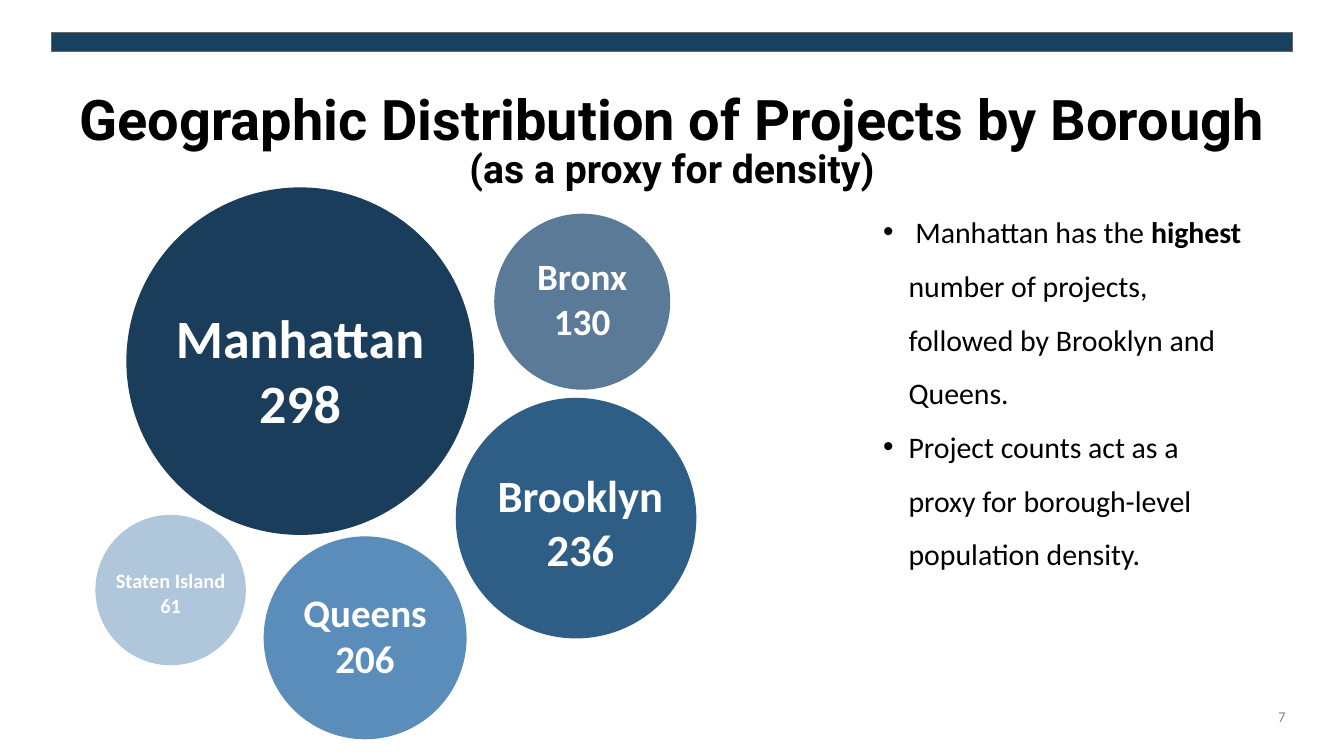
import pptx
import pptx.util
import pptx.dml.color
import pptx.enum.shapes
import pptx.enum.text
import pptx.oxml.ns
import lxml.etree

Pt = pptx.util.Pt
RGB = pptx.dml.color.RGBColor.from_string
ALIGN = pptx.enum.text.PP_ALIGN
ANCHOR = pptx.enum.text.MSO_ANCHOR
SHAPE = pptx.enum.shapes.MSO_SHAPE

THEME = {
    "heading_font": "Roboto", "body_font": "Calibri",
    "bar": "17415F", "bar_line": "666666",
    "ink": "000000", "light": "FFFFFF", "muted": "888888",
    "title": 30, "subtitle": 21, "body": 16, "number": 8,
}

HEADINGS = [
    ("Geographic Distribution of Projects by Borough", "title", 31, 36),
    ("(as a proxy for density)", "subtitle", 67, 25),
]

# name, projects, centre x, centre y, diameter, fill, type size, label offset
BOROUGHS = [
    ("Manhattan", 298, 160.8, 193.5, 186.2, "1A3D5C", 28.9, (0, 4.3)),
    ("Brooklyn", 236, 308.6, 277.6, 128.9, "2E5D86", 23.9, (2.4, 1.8)),
    ("Queens", 206, 195.6, 341.7, 108.7, "5A8DB9", 20.9, (0, -1.5)),
    ("Bronx", 130, 311.9, 161.6, 94.3, "5A7A98", 19.9, (0, -1.8)),
    ("Staten Island", 61, 91.4, 316.1, 80.6, "AFC6DB", 10.9, (0, 1.5)),
]

FINDINGS = [
    [(" Manhattan has the ", False), ("highest", True),
     (" number of projects, followed by Brooklyn and Queens.", False)],
    [("Project counts act as a proxy for borough-level population density.", False)],
]

MARGIN, CONTENT_WIDTH = 27.6, 664.8


def style(r, font, size, color, bold=False):
    r.font.name = THEME[font]
    r.font.size = Pt(size)
    r.font.color.rgb = RGB(THEME[color])
    r.font.bold = bold


def set_insets(tf, left=0, top=0, right=0, bottom=0):
    tf.margin_left, tf.margin_top = Pt(left), Pt(top)
    tf.margin_right, tf.margin_bottom = Pt(right), Pt(bottom)


def add_text(s, x, y, w, h):
    tf = s.shapes.add_textbox(Pt(x), Pt(y), Pt(w), Pt(h)).text_frame
    tf.word_wrap = True
    set_insets(tf)
    return tf


def add_shape(s, kind, x, y, w, h, fill):
    sp = s.shapes.add_shape(kind, Pt(x), Pt(y), Pt(w), Pt(h))
    sp.shadow.inherit = False
    sp.fill.solid()
    sp.fill.fore_color.rgb = RGB(fill)
    sp.line.fill.background()
    return sp


def add_bubble(s, name, count, cx, cy, d, fill, size, offset):
    sp = add_shape(s, SHAPE.OVAL, cx - d / 2, cy - d / 2, d, d, fill)
    tf = sp.text_frame
    dx, dy = offset
    set_insets(tf, max(0, 2 * dx), max(0, 2 * dy), max(0, -2 * dx), max(0, -2 * dy))
    tf.word_wrap = False
    tf.vertical_anchor = ANCHOR.MIDDLE
    tf.text = f"{name}\n{count}"
    for p in tf.paragraphs:
        p.alignment = ALIGN.CENTER
        style(p.runs[0], "body_font", size, "light", True)


def add_bullet(p):
    pPr = p._p.get_or_add_pPr()
    pPr.set("marL", str(Pt(28.8)))
    pPr.set("indent", str(Pt(-13.7)))
    qn = pptx.oxml.ns.qn
    color = lxml.etree.SubElement(pPr, qn("a:buClr"))
    lxml.etree.SubElement(color, qn("a:srgbClr"), val=THEME["ink"])
    lxml.etree.SubElement(pPr, qn("a:buFont"), typeface="Arial")
    lxml.etree.SubElement(pPr, qn("a:buChar"), char="•")


prs = pptx.Presentation()
prs.slide_width, prs.slide_height = Pt(720), Pt(405)
s = prs.slides.add_slide(prs.slide_layouts[6])

bar = add_shape(s, SHAPE.RECTANGLE, MARGIN, 17.5, CONTENT_WIDTH, 10.2, THEME["bar"])
bar.line.color.rgb = RGB(THEME["bar_line"])
bar.line.width = Pt(0.75)

for text, role, y, h in HEADINGS:
    tf = add_text(s, MARGIN, y, CONTENT_WIDTH, h)
    tf.text = text
    p = tf.paragraphs[0]
    p.alignment = ALIGN.CENTER
    p.line_spacing = 1.4
    style(p.runs[0], "heading_font", THEME[role], "ink", True)

for borough in BOROUGHS:
    add_bubble(s, *borough)

tf = add_text(s, 458, 105, 213, 194)
for i, finding in enumerate(FINDINGS):
    p = tf.add_paragraph() if i else tf.paragraphs[0]
    p.level = 1
    p.line_spacing = 1.5
    add_bullet(p)
    for text, bold in finding:
        r = p.add_run()
        r.text = text
        style(r, "body_font", THEME["body"], "ink", bold)

tf = add_text(s, 608.4, 376.5, 84, 14.4)
set_insets(tf, 3.6, 1.4, 3.6, 1.4)
tf.vertical_anchor = ANCHOR.MIDDLE
tf.text = "7"
p = tf.paragraphs[0]
p.alignment = ALIGN.RIGHT
style(p.runs[0], "body_font", THEME["number"], "muted")

prs.save("out.pptx")
